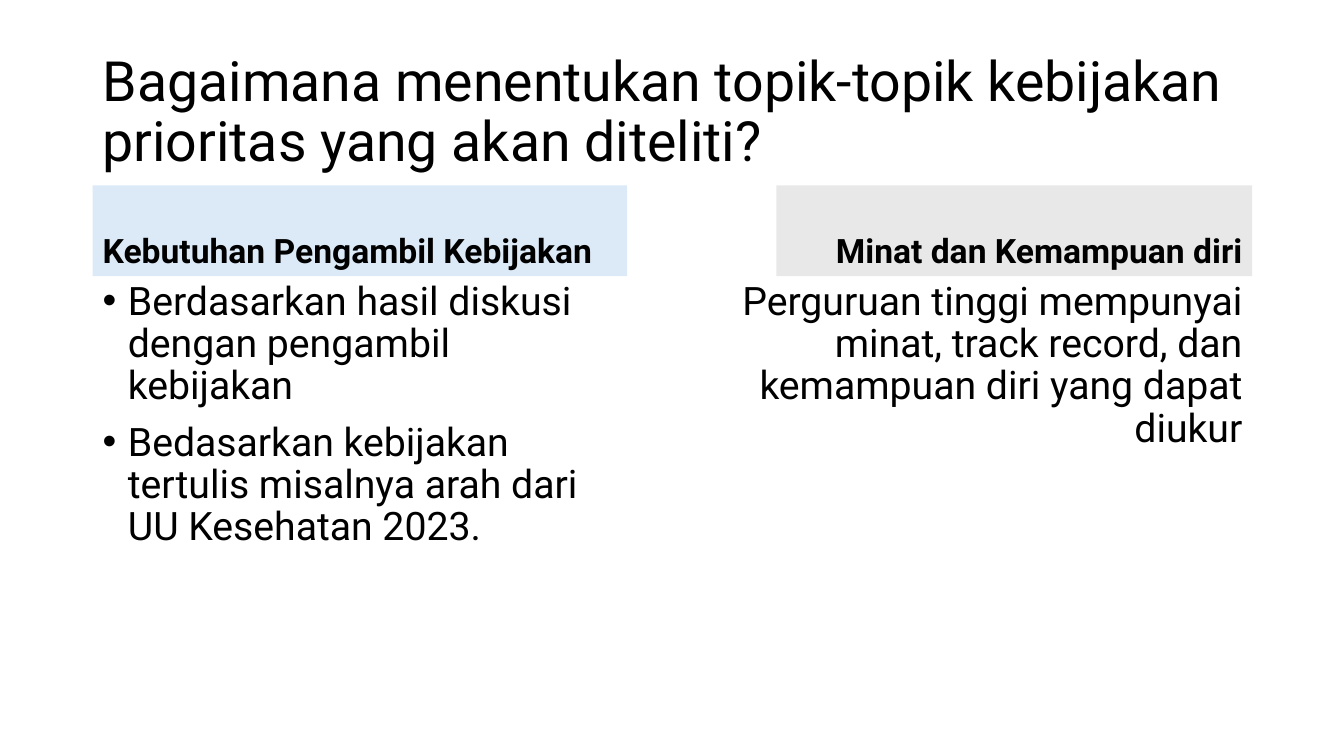
from lxml import etree
from pptx import Presentation
from pptx.dml.color import RGBColor
from pptx.enum import shapes, text
from pptx.oxml.ns import qn
from pptx.util import Inches, Pt

THEME = {
    "font": "Roboto",
    "ink": "000000",
    "blue": "DCEAF7",
    "grey": "E8E8E8",
    "title": 39.6,
    "heading": 24,
    "body": 28,
}

TITLE = "Bagaimana menentukan topik-topik kebijakan prioritas yang akan diteliti?"
COLUMNS = [
    {
        "heading": "Kebutuhan Pengambil Kebijakan",
        "body": [
            "Berdasarkan hasil diskusi dengan pengambil kebijakan",
            "Bedasarkan kebijakan tertulis misalnya arah dari UU Kesehatan 2023.",
        ],
        "fill": "blue", "align": "LEFT", "bullet": True,
        "heading_width": 5.3, "body_width": 5.08,
    },
    {
        "heading": "Minat dan Kemampuan diri",
        "body": [
            "Perguruan tinggi mempunyai minat, track record, dan "
            "kemampuan diri yang dapat diukur",
        ],
        "fill": "grey", "align": "RIGHT", "bullet": False,
        "heading_width": 4.72, "body_width": 5.25,
    },
]

LEFT, RIGHT = 0.92, 12.42
TITLE_TOP, TITLE_HEIGHT = 0.4, 1.45
HEADING_TOP, HEADING_HEIGHT = 1.84, 0.9
BODY_TOP, BODY_HEIGHT = HEADING_TOP + HEADING_HEIGHT, 4.03
INDENT = Inches(0.25)


def add_bullet(p):
    """Give the paragraph a round bullet with a hanging indent."""
    pPr = p._p.get_or_add_pPr()
    pPr.set("marL", str(INDENT))
    pPr.set("indent", str(-INDENT))
    etree.SubElement(pPr, qn("a:buFont")).set("typeface", "Arial")
    etree.SubElement(pPr, qn("a:buChar")).set("char", "•")


def write(sp, lines, size, anchor="TOP", align="LEFT", before=0, bold=False,
          bullet=False):
    tf = sp.text_frame
    tf.word_wrap = True
    tf.auto_size = text.MSO_AUTO_SIZE.NONE
    tf.vertical_anchor = text.MSO_ANCHOR[anchor]
    p_format = {"alignment": text.PP_ALIGN[align], "line_spacing": 0.9,
                "space_before": Pt(before)}
    r_format = {"name": THEME["font"], "size": Pt(THEME[size]), "bold": bold}
    for i, line in enumerate(lines):
        p = tf.add_paragraph() if i else tf.paragraphs[0]
        for name, value in p_format.items():
            setattr(p, name, value)
        if bullet:
            add_bullet(p)
        r = p.add_run()
        r.text = line
        for name, value in r_format.items():
            setattr(r.font, name, value)
        r.font.color.rgb = RGBColor.from_string(THEME["ink"])


def add_column(s, col):
    def box(top, width, height):
        left = LEFT if col["align"] == "LEFT" else RIGHT - width
        return [Inches(v) for v in (left, top, width, height)]

    heading = s.shapes.add_shape(
        shapes.MSO_SHAPE.RECTANGLE,
        *box(HEADING_TOP, col["heading_width"], HEADING_HEIGHT))
    heading.shadow.inherit = False
    heading.fill.solid()
    heading.fill.fore_color.rgb = RGBColor.from_string(THEME[col["fill"]])
    heading.line.fill.background()
    write(heading, [col["heading"]], "heading", anchor="BOTTOM",
          align=col["align"], before=10, bold=True)

    body = s.shapes.add_textbox(*box(BODY_TOP, col["body_width"], BODY_HEIGHT))
    write(body, col["body"], "body", align=col["align"], before=10,
          bullet=col["bullet"])


def main():
    prs = Presentation()
    prs.slide_width, prs.slide_height = Inches(13.33), Inches(7.5)
    s = prs.slides.add_slide(prs.slide_layouts[6])
    title = s.shapes.add_textbox(Inches(LEFT), Inches(TITLE_TOP),
                                 Inches(RIGHT - LEFT), Inches(TITLE_HEIGHT))
    write(title, [TITLE], "title", anchor="MIDDLE")
    for col in COLUMNS:
        add_column(s, col)
    prs.save("out.pptx")


if __name__ == "__main__":
    main()
